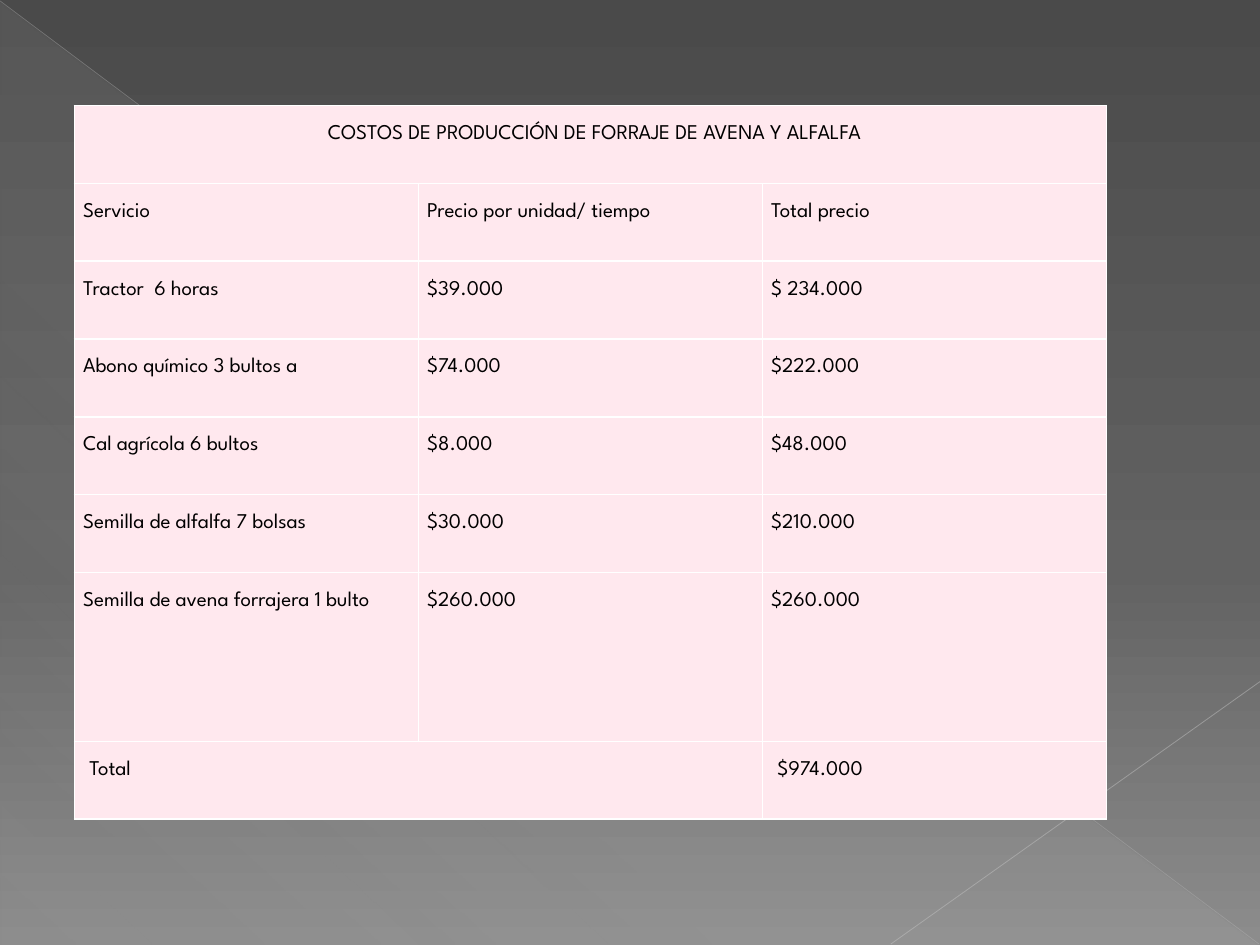
from lxml.etree import SubElement
from pptx import Presentation
from pptx.dml.color import RGBColor
from pptx.enum.shapes import MSO_CONNECTOR, MSO_SHAPE
from pptx.enum.text import PP_ALIGN
from pptx.oxml.ns import qn
from pptx.util import Pt

WIDTH, HEIGHT = 720, 540
FONT = "League Spartan"
TITLE = "COSTOS DE PRODUCCIÓN DE FORRAJE DE AVENA Y ALFALFA"
COST_ROWS = [
    ("Servicio", "Precio por unidad/ tiempo", "Total precio"),
    ("Tractor  6 horas", "$39.000", "$ 234.000"),
    ("Abono químico 3 bultos a", "$74.000", "$222.000"),
    ("Cal agrícola 6 bultos", "$8.000", "$48.000"),
    ("Semilla de alfalfa 7 bolsas", "$30.000", "$210.000"),
    ("Semilla de avena forrajera 1 bulto", "$260.000", "$260.000"),
]
ROW_SHARES = [44.5] * 6 + [96.5, 44.5]


def color(value):
    return RGBColor.from_string(value)


def add_color(parent, value, opacity=100):
    element = SubElement(parent, qn("a:srgbClr"), val=value)
    if opacity < 100:
        SubElement(element, qn("a:alpha"), val=str(opacity * 1000))


def set_gradient(fill, owner, stops, angle):
    """Give owner's fill the stops (position, colour, opacity), angle clockwise."""
    fill.gradient()
    gradient = next(owner.iter(qn("a:gradFill")))
    stop_list = gradient.find(qn("a:gsLst"))
    for stop in list(stop_list):
        stop_list.remove(stop)
    for position, value, opacity in stops:
        stop = SubElement(stop_list, qn("a:gs"), pos=str(position * 1000))
        add_color(stop, value, opacity)
    gradient.find(qn("a:lin")).set("ang", str(angle * 60000))


def add_thin_line(slide, start, end, value, width, opacity):
    line = slide.shapes.add_connector(
        MSO_CONNECTOR.STRAIGHT, *(Pt(length) for length in (*start, *end)))
    line.line.width = Pt(width)
    line.line.color.rgb = color(value)
    properties = line._element.spPr
    fill_color = next(properties.iter(qn("a:srgbClr")))
    SubElement(fill_color, qn("a:alpha"), val=str(opacity * 1000))
    SubElement(properties, qn("a:effectLst"))


def add_backdrop(slide, left, top, width, height):
    set_gradient(slide.background.fill, slide._element,
                 [(0, "4A4A4A", 100), (60, "626262", 100), (100, "8C8C8C", 100)], 90)
    triangle = slide.shapes.add_shape(
        MSO_SHAPE.RIGHT_TRIANGLE, Pt(left + 0.5), Pt(top + 1), Pt(width - 1), Pt(height - 1))
    triangle.shadow.inherit = False
    triangle.line.fill.background()
    set_gradient(triangle.fill, triangle._element,
                 [(0, "D2D2D2", 10), (70, "D2D2D2", 8), (100, "D2D2D2", 1)], 133)
    right, bottom = left + width, top + height - 0.5
    add_thin_line(slide, (left, top + 0.5), (right - 0.5, bottom), "BFBFBF", 0.39, 35)
    add_thin_line(slide, (right, top + 389.5), (left + 509, bottom), "C6C6C6", 0.47, 45)


def set_borders(cell):
    properties = cell._tc.get_or_add_tcPr()
    for position, side in enumerate(("a:lnL", "a:lnR", "a:lnT", "a:lnB")):
        border = properties.makeelement(qn(side), {"w": str(Pt(1))})
        add_color(SubElement(border, qn("a:solidFill")), "FFFFFF")
        properties.insert(position, border)


def write_cell(cell, text, indent=0, margin=5, space_after=0, alignment=PP_ALIGN.LEFT):
    cell.margin_left = cell.margin_right = Pt(margin)
    cell.margin_top = cell.margin_bottom = 0
    paragraph = cell.text_frame.paragraphs[0]
    paragraph.text = text
    paragraph.alignment = alignment
    paragraph.line_spacing = 2.0
    paragraph.space_after = Pt(space_after)
    paragraph.font.name = FONT
    paragraph.font.size = Pt(12)
    paragraph.font.color.rgb = color("000000")
    if indent:
        properties = paragraph._p.get_or_add_pPr()
        properties.set("marL", str(Pt(indent)))
        properties.set("indent", "0")


def add_cost_table(slide, left, top, width, height):
    row_count, column_count = len(ROW_SHARES), len(COST_ROWS[0])
    table = slide.shapes.add_table(
        row_count, column_count, Pt(left), Pt(top), Pt(width), Pt(height)).table
    table.first_row = table.horz_banding = False
    for column in table.columns:
        column.width = Pt(width / column_count)
    for row, share in zip(table.rows, ROW_SHARES):
        row.height = Pt(height * share / sum(ROW_SHARES))
    for cell in table.iter_cells():
        cell.fill.solid()
        cell.fill.fore_color.rgb = color("FFE8EE")
        set_borders(cell)

    last = row_count - 1
    table.cell(0, 0).merge(table.cell(0, column_count - 1))
    table.cell(last, 0).merge(table.cell(last, 1))
    write_cell(table.cell(0, 0), TITLE, 5, 3.6, 8, PP_ALIGN.CENTER)
    for row_index, texts in enumerate(COST_ROWS, start=1):
        for column_index, text in enumerate(texts):
            write_cell(table.cell(row_index, column_index), text)
    write_cell(table.cell(last, 0), "Total", 5, 3.6, 8)
    write_cell(table.cell(last, 2), "$974.000", 5, 3.6)


def main():
    presentation = Presentation()
    presentation.slide_width, presentation.slide_height = Pt(WIDTH), Pt(HEIGHT)
    slide = presentation.slides.add_slide(presentation.slide_layouts[6])
    add_backdrop(slide, 0, 0, WIDTH, HEIGHT)
    add_cost_table(slide, 42.5, 60.3, 589.8, 408)
    presentation.save("out.pptx")


if __name__ == "__main__":
    main()
